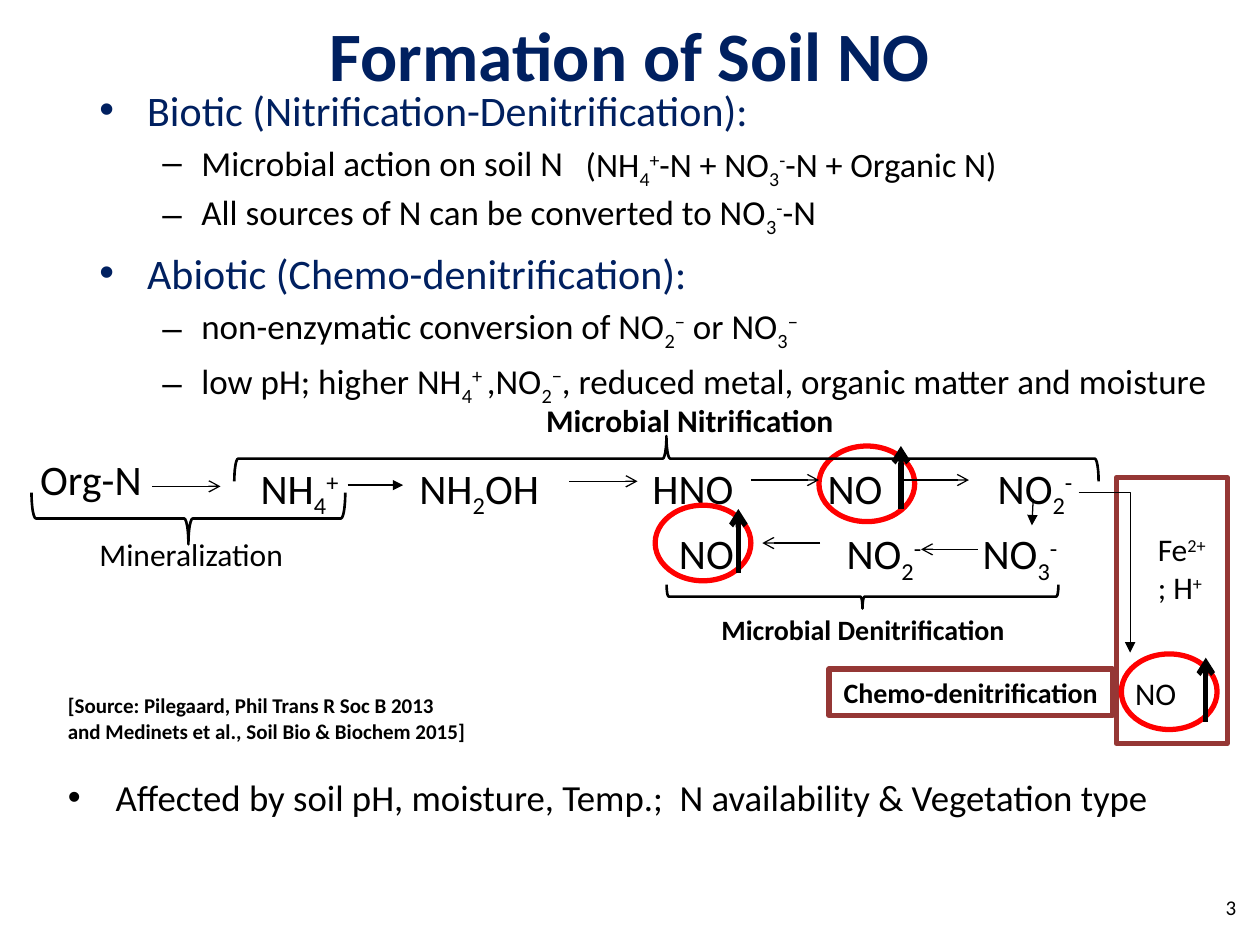
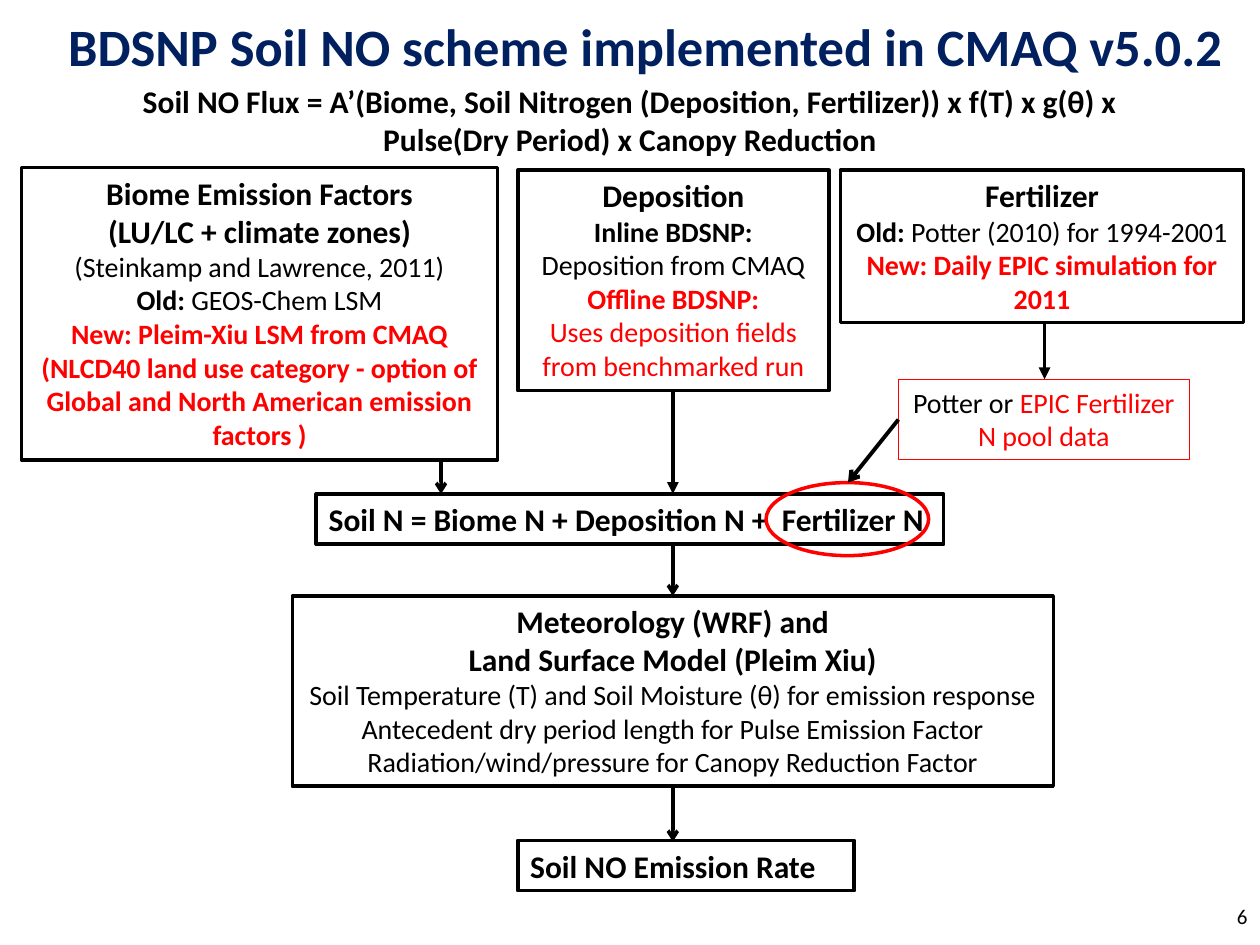
from lxml.etree import SubElement
from pptx import Presentation
from pptx.dml.color import RGBColor
from pptx.enum.shapes import MSO_CONNECTOR, MSO_SHAPE
from pptx.enum.text import MSO_ANCHOR, PP_ALIGN
from pptx.oxml.ns import qn
from pptx.util import Emu, Pt

SCALE = 9144
FONT = "Calibri"
COLORS = {
    "navy": "002060",
    "black": "000000",
    "white": "FFFFFF",
    "red": "FF0000",
    "maroon": "953735",
}
ALIGNMENTS = {"left": PP_ALIGN.LEFT, "center": PP_ALIGN.CENTER, "right": PP_ALIGN.RIGHT}
BASELINES = {"_": "-25000", "^": "30000"}
TITLE = {"color": "navy", "bold": True, "align": "center"}
HEADING = {"size": 18, "bold": True, "align": "center"}
DETAIL = {"size": 16, "align": "center"}
NEWS = {"size": 16, "align": "center", "color": "red", "bold": True}
PAGE_NUMBER = {"size": 12, "align": "right"}


def draw(slide, box, preset=None, line=None, weight=2, fill=None, rotation=0, anchor=MSO_ANCHOR.TOP):
    lengths = [Emu(px * SCALE) for px in box]
    if preset is None:
        shape = slide.shapes.add_textbox(*lengths)
    else:
        shape = slide.shapes.add_shape(preset, *lengths)
        shape.shadow.inherit = False
        shape.rotation = rotation
        if fill:
            shape.fill.solid()
            shape.fill.fore_color.rgb = RGBColor.from_string(COLORS[fill])
        else:
            shape.fill.background()
        if line:
            shape.line.color.rgb = RGBColor.from_string(COLORS[line])
            shape.line.width = Pt(weight)
        else:
            shape.line.fill.background()
    shape.text_frame.word_wrap = True
    shape.text_frame.vertical_anchor = anchor
    return shape


def write(shape, text, size=18, color="black", bold=False, align="left", bullet=None, margin=0, hanging=0, before=0):
    frame = shape.text_frame
    for text_line in text.split("\n"):
        paragraph = frame.paragraphs[0]
        if paragraph.runs:
            paragraph = frame.add_paragraph()
        paragraph.alignment = ALIGNMENTS[align]
        paragraph.space_before = Pt(before)
        if bullet:
            properties = paragraph._p.get_or_add_pPr()
            properties.set("marL", str(margin * SCALE))
            properties.set("indent", str(-hanging * SCALE))
            SubElement(properties, qn("a:buFont"), typeface="Arial")
            SubElement(properties, qn("a:buChar"), char=bullet)
        for piece in text_line.split("|"):
            mark = piece[0] if piece[0] in "_^*!" else ""
            run = paragraph.add_run()
            run.text = piece[len(mark):]
            run.font.name = FONT
            run.font.size = Pt(size)
            run.font.bold = bold or mark == "*"
            run.font.color.rgb = RGBColor.from_string(COLORS["red" if mark == "!" else color])
            if mark in BASELINES:
                run._r.get_or_add_rPr().set("baseline", BASELINES[mark])


presentation = Presentation()
presentation.slide_width = Emu(1000 * SCALE)
presentation.slide_height = Emu(750 * SCALE)
blank_layout = presentation.slide_layouts[6]
formation = presentation.slides.add_slide(blank_layout)
scheme = presentation.slides.add_slide(blank_layout)

title = draw(formation, (69, 17, 862, 52), anchor=MSO_ANCHOR.MIDDLE)
write(title, "Formation of Soil NO", size=39.6, **TITLE)

pathways = draw(formation, (69, 62, 923, 260))
topic = {"size": 24, "color": "navy", "bullet": "•", "margin": 38, "hanging": 38, "before": 5}
point = {"size": 20, "bullet": "–", "margin": 81, "hanging": 31, "before": 4}
write(pathways, "Biotic (Nitrification-Denitrification):", **{**topic, "before": 0})
write(pathways, "Microbial action on soil N\nAll sources of N can be converted to NO|_3|^-|-N", **point)
write(pathways, "Abiotic (Chemo-denitrification):", **topic)
write(
    pathways,
    "non-enzymatic conversion of NO|_2|^−| or NO|_3|^−\n"
    "low pH; higher NH|_4|^+ |,NO|_2|^−|, reduced metal, organic matter and moisture",
    **point,
)

labels = [
    ((414, 109, 428, 44), "(NH|_4|^+|-N + NO|_3|^-|-N + Organic N)", {"size": 19.5, "align": "center"}),
    ((44, 545, 571, 50),
     "[Source: Pilegaard, Phil Trans R Soc B 2013\nand Medinets et al., Soil Bio & Biochem 2015]",
     {"size": 12, "bold": True}),
    ((339, 313, 417, 40), "Microbial Nitrification", HEADING),
    ((452, 481, 466, 37), "Microbial Denitrification", {**HEADING, "size": 16}),
    ((69, 420, 172, 40), "Mineralization", {}),
    ((909, 416, 62, 71), "Fe|^2+| ; H|^+", {}),
    ((891, 530, 62, 40), "NO", {}),
    ((44, 610, 908, 76), "Affected by soil pH, moisture, Temp.;  N availability & Vegetation type",
     {"size": 21, "bullet": "•", "margin": 38, "hanging": 38}),
]
for box, text, style in labels:
    write(draw(formation, box), text, **style)

reaction_rows = [
    (355, [(22, "Org-N")]),
    (362, [(197, "NH|_4|^+"), (323, "NH|_2|OH"), (508, "HNO"), (647, "NO"), (782, "NO|_2|^-")]),
    (414, [(529, "NO"), (662, "NO|_2|^-"), (770, "NO|_3|^-")]),
]
for top, species in reaction_rows:
    for left, formula in species:
        write(draw(formation, (left, top, 122, 50)), formula, size=24)

chemo_label = draw(formation, (658, 531, 225, 37), MSO_SHAPE.RECTANGLE, "maroon", 3, "white")
write(chemo_label, "Chemo-denitrification", **{**HEADING, "size": 16})
draw(formation, (886, 379, 88, 211), MSO_SHAPE.RECTANGLE, "maroon", 3)

for left, top in [(520, 401), (890, 519), (650, 354)]:
    draw(formation, (left, top, 76, 60), MSO_SHAPE.OVAL, "red", 3)

braces = [
    ((511, 21, 36, 686), 270),
    ((675, 318, 19, 311), 90),
    ((129, 287, 41, 249), 90),
]
for box, rotation in braces:
    draw(formation, box, MSO_SHAPE.RIGHT_BRACE, "black", 1.5, rotation=rotation)

write(draw(formation, (758, 700, 233, 40), anchor=MSO_ANCHOR.MIDDLE), "3", **PAGE_NUMBER)

write(draw(scheme, (25, 6, 975, 61)), "BDSNP Soil NO scheme implemented in CMAQ v5.0.2", size=30, **TITLE)
write(
    draw(scheme, (0, 60, 1000, 71)),
    "Soil NO Flux = A’(Biome, Soil Nitrogen (Deposition, Fertilizer)) x f(T) x g(θ) x\n"
    "Pulse(Dry Period) x Canopy Reduction",
    **HEADING,
)

scheme_boxes = [
    ((17, 133, 378, 232), [
        ("Biome Emission Factors\n(LU/LC + climate zones)", HEADING),
        ("(Steinkamp and Lawrence, 2011)\n*Old: |GEOS-Chem LSM", DETAIL),
        ("New: Pleim-Xiu LSM from CMAQ (NLCD40 land use category - option of "
         "Global and North American emission factors )", NEWS),
    ]),
    ((411, 135, 247, 175), [
        ("Deposition", HEADING),
        ("*Inline BDSNP: |Deposition from CMAQ", DETAIL),
        ("Offline BDSNP:", NEWS),
        ("!Uses deposition fields from benchmarked run", DETAIL),
    ]),
    ((667, 135, 320, 121), [
        ("Fertilizer", HEADING),
        ("*Old: |Potter (2010) for 1994-2001", DETAIL),
        ("New: Daily EPIC simulation for 2011", NEWS),
    ]),
    ((251, 392, 498, 40), [
        ("Soil N = Biome N + Deposition N +  Fertilizer N", {**HEADING, "align": "left"}),
    ]),
    ((232, 473, 604, 151), [
        ("Meteorology (WRF) and\nLand Surface Model (Pleim Xiu)", HEADING),
        ("Soil Temperature (T) and Soil Moisture (θ) for emission response\n"
         "Antecedent dry period length for Pulse Emission Factor\n"
         "Radiation/wind/pressure for Canopy Reduction Factor", DETAIL),
    ]),
    ((411, 667, 267, 40), [("Soil NO Emission Rate", {**HEADING, "align": "left"})]),
]
for box, paragraphs in scheme_boxes:
    shape = draw(scheme, box, MSO_SHAPE.RECTANGLE, "black", 2, "white")
    for text, style in paragraphs:
        write(shape, text, **style)

pool_data = draw(scheme, (713, 301, 231, 64), MSO_SHAPE.RECTANGLE, "red", 0.75)
write(pool_data, "Potter or |!EPIC Fertilizer N pool data", **DETAIL)
draw(scheme, (608, 383, 129, 58), MSO_SHAPE.OVAL, "red", 2)
write(draw(scheme, (767, 707, 233, 40), anchor=MSO_ANCHOR.MIDDLE), "6", **PAGE_NUMBER)

arrow_groups = [
    (formation, 0.75, "arrow", [
        (776, 436, 731, 436), (651, 431, 605, 431), (452, 382, 506, 382),
        (596, 381, 650, 381), (715, 381, 769, 381), (121, 386, 175, 386),
    ]),
    (formation, 0.75, "triangle", [(820, 396, 819, 417), (276, 385, 320, 385), (856, 391, 897, 518)]),
    (formation, 3, "arrow", [(957, 573, 957, 522), (715, 404, 715, 354), (586, 455, 586, 404)]),
    (scheme, 2, "arrow", [(350, 366, 350, 392), (534, 432, 534, 473), (534, 625, 534, 668)]),
    (scheme, 2.25, "arrow", [(713, 333, 673, 383)]),
    (scheme, 2.25, "triangle", [(829, 256, 829, 301), (534, 310, 534, 392)]),
]
chemical_route = (856, 391, 897, 518)
for slide, weight, head, arrows in arrow_groups:
    for ends in arrows:
        bent = ends == chemical_route
        kind = MSO_CONNECTOR.ELBOW if bent else MSO_CONNECTOR.STRAIGHT
        connector = slide.shapes.add_connector(kind, *[Emu(px * SCALE) for px in ends])
        connector.line.color.rgb = RGBColor.from_string(COLORS["black"])
        connector.line.width = Pt(weight)
        properties = connector._element.spPr
        if bent:
            properties.find(qn("a:prstGeom")).set("prst", "bentConnector2")
        SubElement(properties.find(qn("a:ln")), qn("a:tailEnd"), type=head)
        SubElement(properties, qn("a:effectLst"))

presentation.save("out.pptx")
